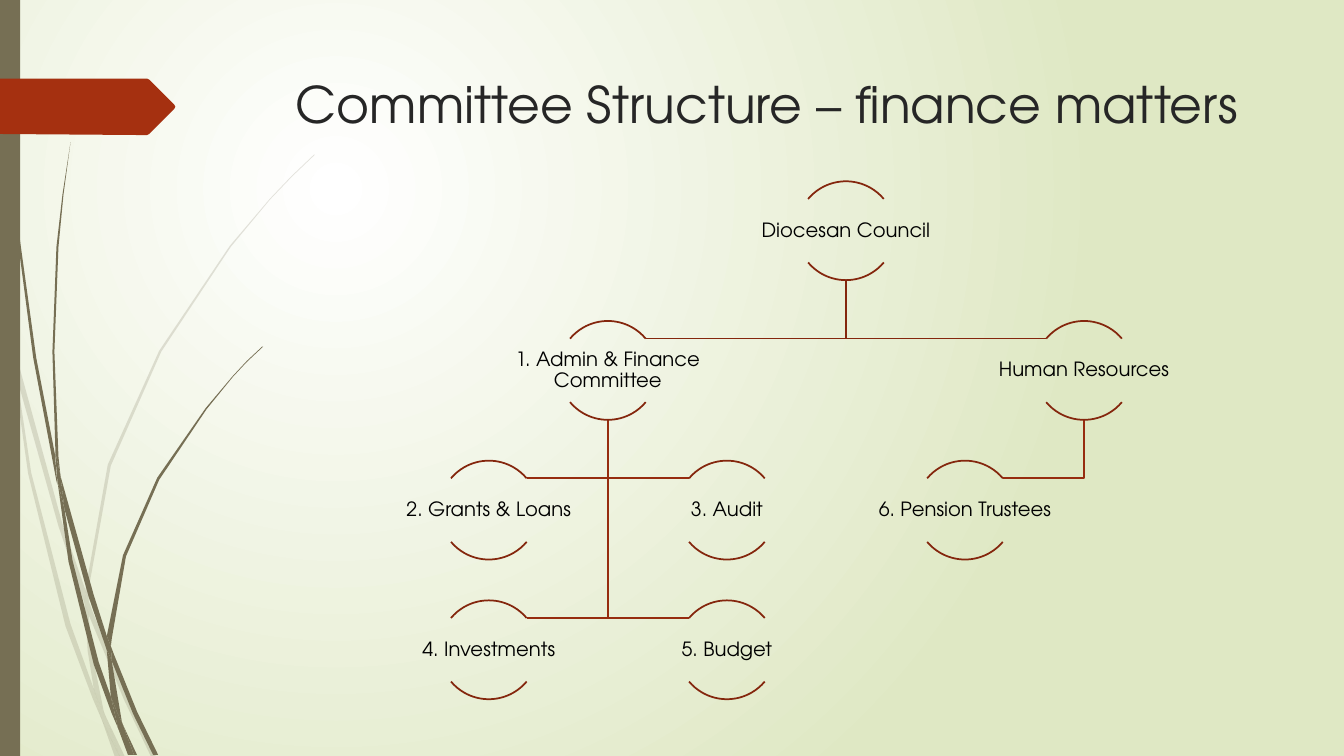
import lxml.etree
import pptx
import pptx.dml.color
import pptx.enum.shapes
import pptx.enum.text
import pptx.oxml
import pptx.oxml.ns
import pptx.util

Cm = pptx.util.Cm
Pt = pptx.util.Pt

TITLE = "Committee Structure – finance matters"
COMMITTEES = {
    "council": ("Diocesan Council", 3, 0),
    "admin": ("1. Admin & Finance Committee", 1, 1),
    "grants": ("2. Grants & Loans", 0, 2),
    "audit": ("3. Audit", 2, 2),
    "investments": ("4. Investments", 0, 3),
    "budget": ("5. Budget", 2, 3),
    "resources": ("Human Resources", 5, 1),
    "pension": ("6. Pension Trustees", 4, 2),
}
REPORTING_LINES = [
    ("resources", "pension"), ("council", "resources"),
    ("admin", "budget"), ("admin", "investments"),
    ("admin", "audit"), ("admin", "grants"), ("council", "admin"),
]

FONT = "TeX Gyre Adventor"
COLOURS = {
    "centre": "FFFFFF", "edge": "DFE8C4", "stem": "766F54", "marker": "A53010",
    "title": "262626", "label": "000000", "line": "84260D", "lower line": "962C0F",
}
HUNDREDTH_INCH = Cm(2.54) / 100

PALE_STEMS = [
    [(11, 350), (9, 322), (0, 282), (0, 299), (10, 344)],
    [(58, 522), (84, 599), (85, 586), (62, 520), (14, 345), (17, 376)],
    [(92, 607), (88, 596), (88, 610), (123, 694), (150, 751), (155, 751), (127, 692)],
    [(119, 751), (124, 751), (105, 711)],
    [(93, 683), (70, 619), (31, 469), (17, 376), (11, 350), (28, 470), (65, 621),
     (92, 693), (101, 714), (99, 707)],
    [(84, 599), (87, 646), (93, 683), (96, 692), (105, 711), (103, 706), (91, 646),
     (88, 610), (88, 608)],
    [(88, 584), (110, 462), (160, 349), (229, 245), (268, 198), (290, 175), (312, 154),
     (312, 153), (289, 175), (268, 197), (228, 244), (158, 348), (107, 461), (85, 584),
     (85, 586), (88, 596)],
    [(101, 714), (114, 751), (119, 751)],
    [(88, 608), (88, 610), (88, 596), (85, 586), (84, 599)],
    [(96, 692), (93, 683), (99, 707), (101, 714), (119, 751), (105, 711)],
]
DARK_STEMS = [
    [(7, 110), (17, 233), (33, 355), (56, 477), (57, 481), (55, 457), (55, 453),
     (36, 355), (19, 232), (8, 109), (5, 48), (4, 0), (3, 0), (4, 48)],
    [(88, 592), (106, 645), (106, 633), (106, 631), (93, 590), (60, 472), (64, 505)],
    [(113, 649), (110, 641), (111, 656), (132, 708), (152, 749), (157, 749), (136, 706)],
    [(110, 691), (98, 657), (72, 556), (64, 505), (57, 477), (68, 557), (93, 659),
     (111, 708), (117, 722), (116, 717)],
    [(60, 472), (58, 453), (54, 349), (58, 245), (63, 193), (70, 141), (62, 193),
     (56, 245), (52, 349), (55, 449)],
    [(133, 749), (136, 749), (122, 719)],
    [(57, 477), (64, 505), (60, 472), (55, 449), (55, 453)],
    [(111, 633), (125, 552), (158, 476), (205, 406), (231, 374), (245, 359), (261, 344),
     (260, 344), (245, 358), (231, 373), (204, 405), (156, 474), (122, 551), (106, 631),
     (110, 641)],
    [(117, 722), (127, 749), (131, 749)],
    [(106, 645), (110, 691), (116, 706), (122, 719), (121, 716), (111, 656), (109, 651)],
    [(106, 645), (109, 651), (111, 656), (110, 641), (106, 631), (106, 633)],
    [(116, 706), (110, 691), (116, 717), (117, 722), (130, 749), (133, 749), (122, 719)],
]
MARKER = [(173, 108), (148, 133), (146, 134), (136, 134), (0, 133), (0, 78), (146, 78),
          (148, 79), (173, 104), (174, 106)]

FIRST_CENTRE, COLUMN_STEP = 12.32, 3.0
FIRST_TOP, ROW_STEP = 4.57, 3.52
DIAMETER, ARC_HALF_WIDTH, ARC_DEPTH = 2.49, 0.95, 0.44
LABEL_WIDTH, LABEL_HEIGHT = 4.96, 1.57
ARC_ANGLES = [(132, 192), (24, 84)]


def colour(name):
    return pptx.dml.color.RGBColor.from_string(COLOURS[name])


def paint(shape, fill=None, line=None):
    shape.shadow.inherit = False
    if fill:
        shape.fill.solid()
        shape.fill.fore_color.rgb = colour(fill)
    else:
        shape.fill.background()
    if line:
        shape.line.color.rgb = colour(line)
        shape.line.width = Pt(1.25)
    else:
        shape.line.fill.background()


def add_outline(slide, points, scale=1.0, close=True):
    builder = slide.shapes.build_freeform(*points[0], scale=scale)
    builder.add_line_segments(points[1:], close=close)
    return builder.convert_to_shape()


def add_text(slide, text, box, size, name):
    shape = slide.shapes.add_textbox(*map(Cm, box))
    shape.text_frame.word_wrap = True
    paragraph = shape.text_frame.paragraphs[0]
    paragraph.text = text
    paragraph.font.name = FONT
    paragraph.font.size = Pt(size)
    paragraph.font.color.rgb = colour(name)
    return shape.text_frame


def set_background(slide):
    fill = slide.background.fill
    fill.gradient()
    for stop, name in zip(fill.gradient_stops, ("centre", "edge")):
        stop.color.rgb = colour(name)
    qualified = pptx.oxml.ns.qn
    linear = next(slide.element.iter(qualified("a:lin")))
    radial = pptx.oxml.parse_xml(
        f'<a:path {pptx.oxml.ns.nsdecls("a")} path="circle">'
        '<a:fillToRect l="50000" t="50000" r="100000" b="100000"/></a:path>')
    linear.getparent().replace(linear, radial)


def add_decoration(slide):
    for stems, opacity in ((PALE_STEMS, 20), (DARK_STEMS, 100)):
        for points in stems:
            stem = add_outline(slide, points, HUNDREDTH_INCH)
            paint(stem, "stem")
            if opacity < 100:
                tint = next(stem.element.iter(pptx.oxml.ns.qn("a:srgbClr")))
                alpha = lxml.etree.SubElement(tint, pptx.oxml.ns.qn("a:alpha"))
                alpha.set("val", str(opacity * 1000))
    bar = slide.shapes.add_shape(
        pptx.enum.shapes.MSO_SHAPE.RECTANGLE, 0, 0, Cm(0.51), Cm(19.05))
    paint(bar, "stem")
    paint(add_outline(slide, MARKER, HUNDREDTH_INCH), "marker")


def place(key):
    _, column, row = COMMITTEES[key]
    return FIRST_CENTRE + column * COLUMN_STEP, FIRST_TOP + row * ROW_STEP


def add_reporting_line(slide, parent, child):
    centre, top = place(parent)
    child_centre, child_top = place(child)
    side = 1 if child_centre < centre else -1
    level = child_top + ARC_DEPTH
    points = [(centre, top + DIAMETER), (centre, level),
              (child_centre + side * ARC_HALF_WIDTH, level)]
    elbow = add_outline(slide, [(Cm(x), Cm(y)) for x, y in points], close=False)
    paint(elbow, line="line" if parent == "council" else "lower line")


def add_committee(slide, key):
    centre, top = place(key)
    for angles in ARC_ANGLES:
        arc = slide.shapes.add_shape(
            pptx.enum.shapes.MSO_SHAPE.ARC, Cm(centre - DIAMETER / 2), Cm(top),
            Cm(DIAMETER), Cm(DIAMETER))
        arc.adjustments[0], arc.adjustments[1] = angles
        paint(arc, line="line")
    box = (centre - LABEL_WIDTH / 2, top + (DIAMETER - LABEL_HEIGHT) / 2,
           LABEL_WIDTH, LABEL_HEIGHT)
    frame = add_text(slide, COMMITTEES[key][0], box, 14, "label")
    frame.margin_left = frame.margin_right = Cm(0.03)
    frame.margin_top = frame.margin_bottom = Cm(0.03)
    frame.vertical_anchor = pptx.enum.text.MSO_ANCHOR.MIDDLE
    frame.paragraphs[0].alignment = pptx.enum.text.PP_ALIGN.CENTER
    frame.paragraphs[0].line_spacing = 0.9


def main():
    """Build the committee structure slide."""
    presentation = pptx.Presentation()
    presentation.slide_width, presentation.slide_height = Cm(33.87), Cm(19.05)
    slide = presentation.slides.add_slide(presentation.slide_layouts[6])
    set_background(slide)
    add_decoration(slide)
    add_text(slide, TITLE, (7.21, 1.73, 24.77, 3.56), 36, "title")
    for parent, child in REPORTING_LINES:
        add_reporting_line(slide, parent, child)
    for key in COMMITTEES:
        add_committee(slide, key)
    presentation.save("out.pptx")


if __name__ == "__main__":
    main()
